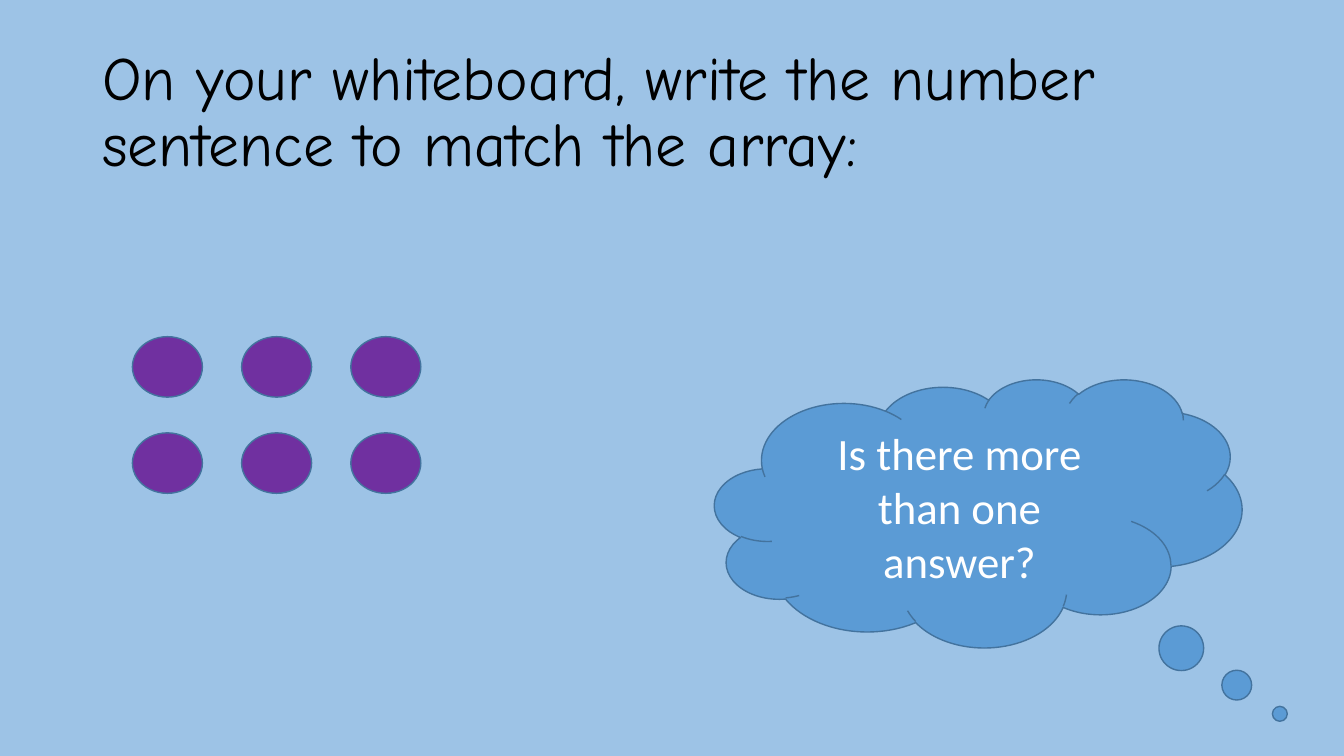
"""Build a slide asking for the number sentence that matches an array of dots."""
from pptx import Presentation
from pptx.dml.color import RGBColor
from pptx.enum.shapes import MSO_SHAPE as Preset
from pptx.enum.text import MSO_ANCHOR as Anchor, PP_ALIGN as Align
from pptx.util import Pt

TITLE = "On your whiteboard, write the number sentence to match the array:"
QUESTION = "Is there more than one answer?"
TITLE_BOX = (66, 28.8, 828, 104.4)
CLOUD_BOX = (510.5, 270.7, 376.6, 191.5)
CLOUD_TAIL = (0.572, 0.749)
ROWS, COLUMNS = 2, 3
DOT_LEFT, DOT_TOP = 94.6, 240.5
DOT_WIDTH, DOT_HEIGHT = 50, 43.2
COLUMN_STEP, ROW_STEP = 78, 68.7
COLOURS = {"page": "9DC3E6", "title": "000000", "cloud": "5B9BD5",
           "question": "FFFFFF", "dot": "7030A0", "outline": "43739E"}


def colour(name):
    return RGBColor.from_string(COLOURS[name])


def add_filled(page, preset, box, fill):
    shape = page.shapes.add_shape(preset, *map(Pt, box))
    shape.shadow.inherit = False
    shape.fill.solid()
    shape.fill.fore_color.rgb = colour(fill)
    shape.line.color.rgb = colour("outline")
    shape.line.width = Pt(1)
    return shape


def write(shape, text, font, size, ink, align, spacing):
    frame = shape.text_frame
    frame.word_wrap = True
    frame.vertical_anchor = Anchor.MIDDLE
    para = frame.paragraphs[0]
    para.alignment = align
    para.line_spacing = spacing
    span = para.add_run()
    span.text = text
    span.font.name = font
    span.font.size = Pt(size)
    span.font.color.rgb = colour(ink)


def main():
    deck = Presentation()
    deck.slide_width, deck.slide_height = Pt(960), Pt(540)
    page = deck.slides.add_slide(deck.slide_layouts[6])
    page.background.fill.solid()
    page.background.fill.fore_color.rgb = colour("page")

    title = page.shapes.add_textbox(*map(Pt, TITLE_BOX))
    write(title, TITLE, "Comic Neue", 44, "title", Align.LEFT, 0.9)

    cloud = add_filled(page, Preset.CLOUD_CALLOUT, CLOUD_BOX, "cloud")
    for index, offset in enumerate(CLOUD_TAIL):
        cloud.adjustments[index] = offset
    write(cloud, QUESTION, "Calibri", 32, "question", Align.CENTER, 1.0)

    for row in range(ROWS):
        for column in range(COLUMNS):
            left = DOT_LEFT + column * COLUMN_STEP
            top = DOT_TOP + row * ROW_STEP
            add_filled(page, Preset.OVAL, (left, top, DOT_WIDTH, DOT_HEIGHT), "dot")

    deck.save("out.pptx")


if __name__ == "__main__":
    main()
